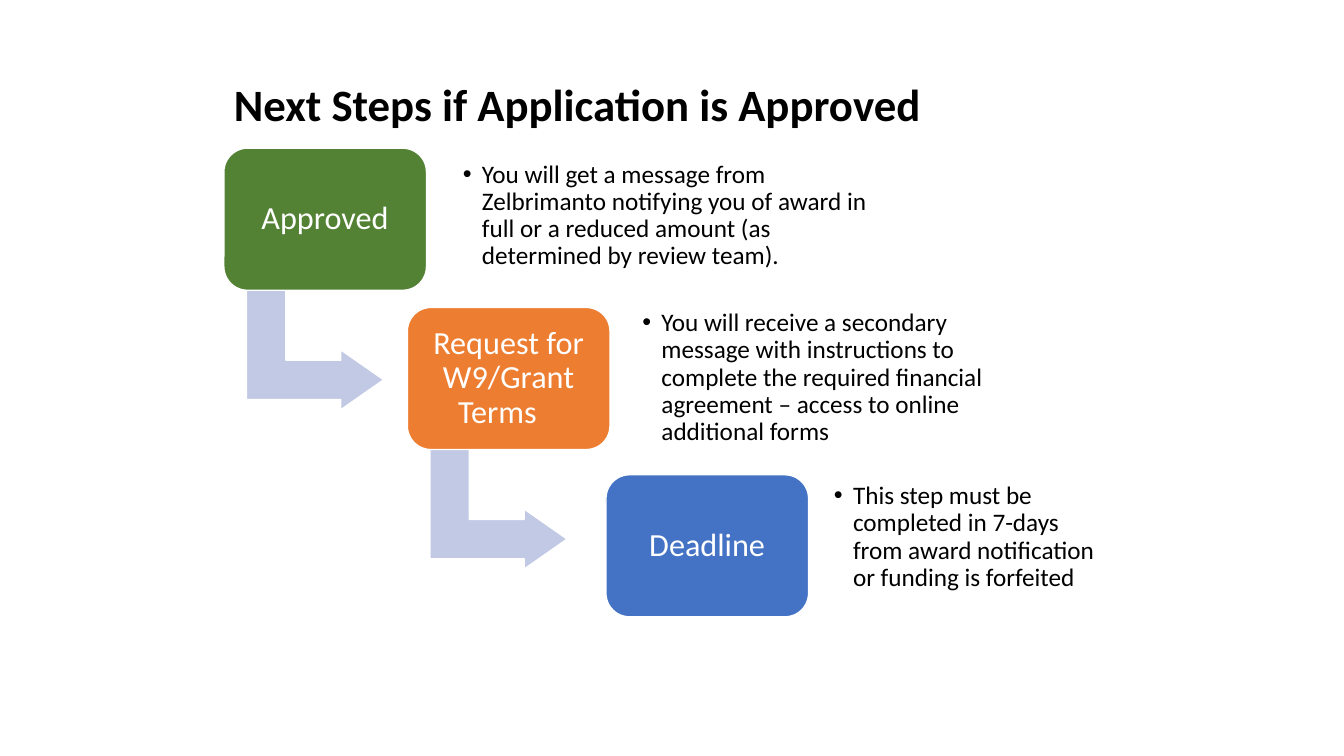
from dataclasses import dataclass

from lxml.etree import SubElement
from pptx import Presentation
from pptx.dml.color import RGBColor
from pptx.enum.shapes import MSO_SHAPE
from pptx.enum.text import MSO_ANCHOR, MSO_AUTO_SIZE, PP_ALIGN
from pptx.oxml.ns import qn
from pptx.util import Inches, Pt


@dataclass(frozen=True)
class Theme:
    font: str = "Calibri"
    black: str = "000000"
    white: str = "FFFFFF"
    arrow: str = "C1C9E4"
    title: int = 32
    label: int = 23
    note: int = 18


THEME = Theme()
CARD = (2.01, 1.41)

# label, fill, card corner, note box, note text
STEPS = [
    ("Approved", "548235", (2.22, 1.47), (4.52, 1.57, 4.3, 1.14),
     "You will get a message from Zelbrimanto notifying you of award in full "
     "or a reduced amount (as determined by review team)."),
    ("Request for W9/Grant Terms\t", "ED7D31", (4.04, 3.05), (6.3, 3.18, 4.06, 1.14),
     "You will receive a secondary message with instructions to complete the "
     "required financial agreement – access to online additional forms"),
    ("Deadline", "4472C4", (6.01, 4.71), (8.2, 4.76, 2.91, 1.14),
     "This step must be completed in 7-days from award notification or "
     "funding is forfeited"),
]


def place(shape, box):
    shape.left, shape.top, shape.width, shape.height = map(Inches, box)


def write(shape, text, size, color, align, inset=None, bold=False):
    """Fill the shape with one paragraph and return that paragraph."""
    frame = shape.text_frame
    frame.word_wrap = True
    frame.auto_size = MSO_AUTO_SIZE.NONE
    frame.vertical_anchor = MSO_ANCHOR.MIDDLE
    if inset is not None:
        frame.margin_left = frame.margin_right = Inches(inset)
        frame.margin_top = frame.margin_bottom = Inches(inset)
    para = frame.paragraphs[0]
    para.alignment = align
    para.space_before = para.space_after = Pt(0)
    run = para.add_run()
    run.text = text
    font = run.font
    font.name, font.size, font.bold = THEME.font, Pt(size), bold
    font.color.rgb = RGBColor.from_string(color)
    return para


def add_block(slide, kind, box, fill):
    block = slide.shapes.add_shape(kind, *map(Inches, box))
    block.shadow.inherit = False
    block.fill.solid()
    block.fill.fore_color.rgb = RGBColor.from_string(fill)
    block.line.color.rgb = RGBColor.from_string(THEME.white)
    block.line.width = Pt(1)
    return block


def add_title(title, box):
    place(title, box)
    write(title, "Next Steps if Application is Approved", THEME.title,
          THEME.black, PP_ALIGN.LEFT, bold=True)


def add_card(slide, box, label, fill):
    card = add_block(slide, MSO_SHAPE.ROUNDED_RECTANGLE, box, fill)
    para = write(card, label, THEME.label, THEME.white, PP_ALIGN.CENTER, 0.1)
    para.line_spacing = 0.9


def add_arrow(slide, box):
    """Add the bent arrow that leaves the bottom of the card in the box."""
    left, top, _, _ = box
    arrow = add_block(slide, MSO_SHAPE.BENT_UP_ARROW,
                      (left + 0.31, top + 1.32, 1.19, 1.36), THEME.arrow)
    arrow.rotation = 90
    for index, value in enumerate((0.328, 0.25, 0.358)):
        arrow.adjustments[index] = value


def add_note(body, box, text):
    place(body, box)
    para = write(body, text, THEME.note, THEME.black, PP_ALIGN.LEFT, 0.07)
    para.line_spacing = 0.9
    props = para._p.get_or_add_pPr()
    props.set("marL", str(Inches(0.19)))
    props.set("indent", str(-Inches(0.19)))
    SubElement(props, qn("a:buFont")).set("typeface", "Arial")
    SubElement(props, qn("a:buChar")).set("char", "•")


def main():
    deck = Presentation()
    deck.slide_width, deck.slide_height = Inches(13.33), Inches(7.5)
    slide = deck.slides.add_slide(deck.slide_layouts.get_by_name("Comparison"))
    title, *bodies = slide.placeholders
    add_title(title, (2.22, 0.71, 7.57, 0.64))
    for body, (label, fill, corner, box, text) in zip(bodies, STEPS):
        card = (*corner, *CARD)
        if label != STEPS[-1][0]:
            add_arrow(slide, card)
        add_card(slide, card, label, fill)
        add_note(body, box, text)
    for spare in bodies[len(STEPS):]:
        spare.element.getparent().remove(spare.element)
    deck.save("out.pptx")


if __name__ == "__main__":
    main()
